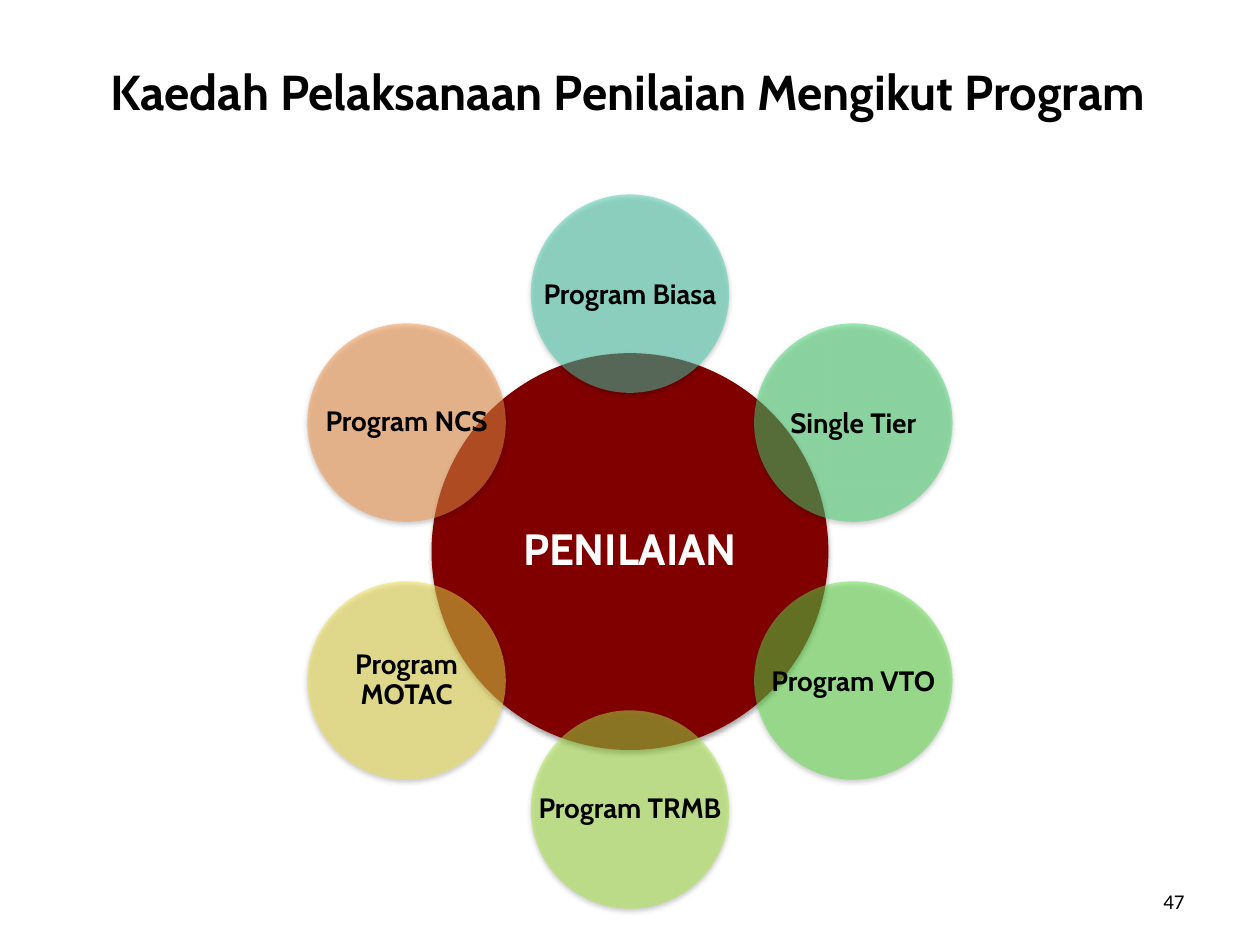
import math

from lxml import etree
from pptx import Presentation
from pptx import util as u
from pptx.dml.color import RGBColor
from pptx.enum import shapes, text
from pptx.oxml import ns


def colour(hex_code):
    return RGBColor.from_string(hex_code)


class SlideBuilder:
    """Holds the style and the slide being built."""

    font = "Cabin"
    ink = "000000"

    def __init__(self, slide):
        self.slide = slide

    def label(self, box, wording, size, align=text.PP_ALIGN.CENTER,
              anchor=text.MSO_ANCHOR.MIDDLE, inset=0.05, ink=None,
              bold=True, font=None, line_spacing=None):
        area = self.slide.shapes.add_textbox(*map(u.Cm, box))
        frame = area.text_frame
        frame.word_wrap = True
        frame.vertical_anchor = anchor
        frame.margin_left = frame.margin_right = u.Cm(inset)
        frame.margin_top = frame.margin_bottom = u.Cm(inset)
        frame.text = wording
        paragraph = frame.paragraphs[0]
        paragraph.alignment = align
        paragraph.line_spacing = line_spacing
        style = paragraph.runs[0].font
        style.name = font or self.font
        style.size = u.Pt(size)
        style.bold = bold
        style.color.rgb = colour(ink or self.ink)

    def disc(self, centre_x, centre_y, diameter, fill, wording, size,
             opacity=100, shadow=(1.6, 38), **label_style):
        box = (centre_x - diameter / 2, centre_y - diameter / 2,
               diameter, diameter)
        circle = self.slide.shapes.add_shape(
            shapes.MSO_SHAPE.OVAL, *map(u.Cm, box))
        circle.fill.solid()
        circle.fill.fore_color.rgb = colour(fill)
        circle.line.fill.background()
        if opacity < 100:
            fill_xml = circle._element.spPr.find(
                ".//" + ns.qn("a:solidFill") + "/" + ns.qn("a:srgbClr"))
            self.alpha(fill_xml, opacity)
        self.drop_shadow(circle, *shadow)
        self.label(box, wording, size, **label_style)

    def alpha(self, colour_xml, percent):
        etree.SubElement(colour_xml, ns.qn("a:alpha"), val=str(percent * 1000))

    def drop_shadow(self, shape, distance, opacity):
        shape.shadow.inherit = False
        effects = shape._element.spPr.find(ns.qn("a:effectLst"))
        outer = etree.SubElement(
            effects, ns.qn("a:outerShdw"), blurRad=str(u.Pt(3.1)),
            dist=str(u.Pt(distance)), dir="5400000", rotWithShape="0")
        shade = etree.SubElement(outer, ns.qn("a:srgbClr"), val=self.ink)
        self.alpha(shade, opacity)


def main():
    deck = Presentation()
    deck.slide_width, deck.slide_height = u.Cm(25.4), u.Cm(19.05)
    builder = SlideBuilder(deck.slides.add_slide(deck.slide_layouts[6]))

    # Hub
    hub_x, hub_y = 12.7, 11.12
    builder.disc(hub_x, hub_y, 8, "800000", "PENILAIAN", 25,
                 shadow=(1.8, 35), ink="FFFFFF", line_spacing=0.9)

    # Programmes, clockwise from the top
    programmes = [
        ("Program Biasa", "49CFAE", None),
        ("Single Tier", "47D872", None),
        ("Program VTO", "60E146", None),
        ("Program TRMB", "ACE946", 0.9),
        ("Program MOTAC", "F0E146", 0.9),
        ("Program NCS", "F79646", 0.9),
    ]
    orbit = 5.2
    for index, (programme, fill, spacing) in enumerate(programmes):
        angle = math.tau * index / len(programmes)
        builder.disc(hub_x + orbit * math.sin(angle),
                     hub_y - orbit * math.cos(angle),
                     4, fill, programme, 16, opacity=50, line_spacing=spacing)

    # Page number
    builder.label((18.2, 17.66, 5.93, 1.01), "47", 12, inset=0.25,
                  align=text.PP_ALIGN.RIGHT, bold=False, font="Calibri")

    # Title
    builder.label((0.9, 1.1, 23.5, 2.6),
                  "Kaedah Pelaksanaan Penilaian Mengikut Program", 28,
                  anchor=text.MSO_ANCHOR.TOP, inset=0.15)

    deck.save("out.pptx")


if __name__ == "__main__":
    main()
